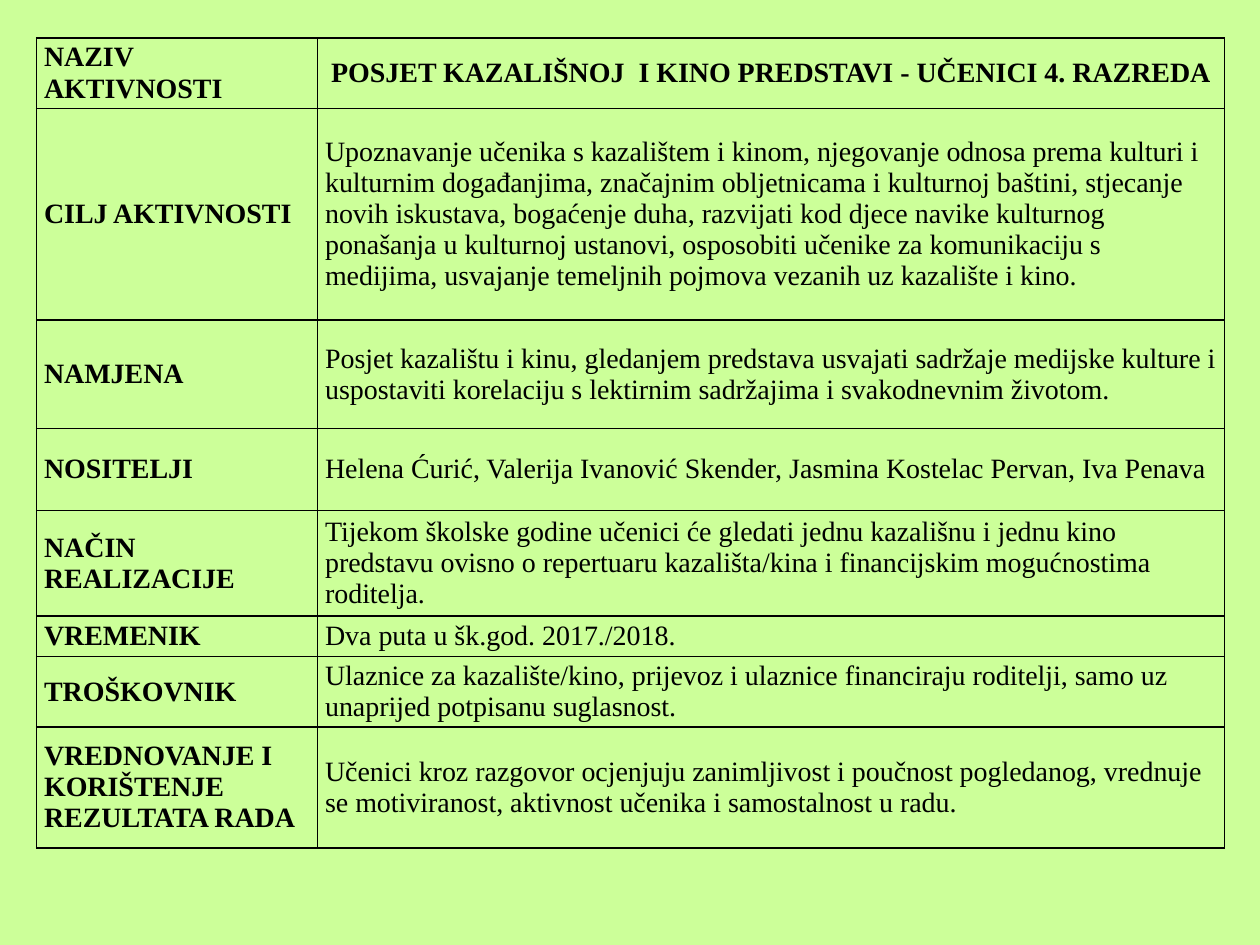
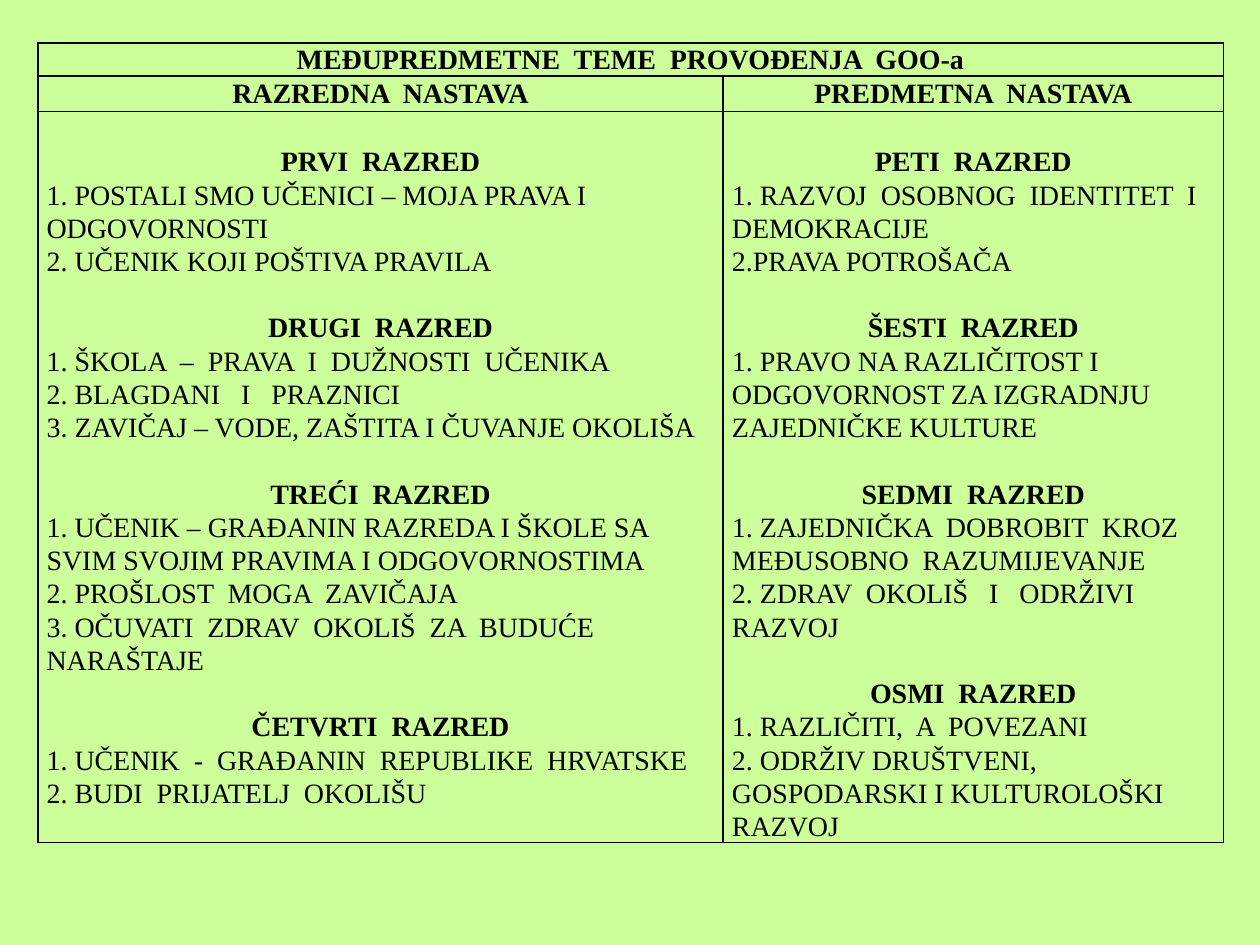
from lxml import etree
from pptx import Presentation
from pptx.dml.color import RGBColor
from pptx.enum.text import MSO_ANCHOR, PP_ALIGN
from pptx.oxml.ns import qn
from pptx.util import Inches, Pt

GREEN = RGBColor(0xCC, 0xFF, 0x99)
BLACK = RGBColor(0x00, 0x00, 0x00)

ACTIVITY = [
    ("NAZIV AKTIVNOSTI", "POSJET KAZALIŠNOJ  I KINO PREDSTAVI - UČENICI 4. RAZREDA"),
    ("CILJ AKTIVNOSTI",
     "Upoznavanje učenika s kazalištem i kinom, njegovanje odnosa prema kulturi i "
     "kulturnim događanjima, značajnim obljetnicama i kulturnoj baštini, stjecanje "
     "novih iskustava, bogaćenje duha, razvijati kod djece navike kulturnog "
     "ponašanja u kulturnoj ustanovi, osposobiti učenike za komunikaciju s "
     "medijima, usvajanje temeljnih pojmova vezanih uz kazalište i kino."),
    ("NAMJENA",
     "Posjet kazalištu i kinu, gledanjem predstava usvajati sadržaje medijske kulture i "
     "uspostaviti korelaciju s lektirnim sadržajima i svakodnevnim životom."),
    ("NOSITELJI",
     "Helena Ćurić, Valerija Ivanović Skender, Jasmina Kostelac Pervan, Iva Penava"),
    ("NAČIN REALIZACIJE",
     "Tijekom školske godine učenici će gledati jednu kazališnu i jednu kino "
     "predstavu ovisno o repertuaru kazališta/kina i financijskim mogućnostima roditelja."),
    ("VREMENIK", "Dva puta u šk.god. 2017./2018."),
    ("TROŠKOVNIK",
     "Ulaznice za kazalište/kino, prijevoz i ulaznice financiraju roditelji, samo uz "
     "unaprijed potpisanu suglasnost."),
    ("VREDNOVANJE I KORIŠTENJE REZULTATA RADA",
     "Učenici kroz razgovor ocjenjuju zanimljivost i poučnost pogledanog, vrednuje "
     "se motiviranost, aktivnost učenika i samostalnost u radu."),
]

LOWER_GRADES = {
    "PRVI  RAZRED": [
        "1. POSTALI SMO UČENICI – MOJA PRAVA I ODGOVORNOSTI",
        "2. UČENIK KOJI POŠTIVA PRAVILA"],
    "DRUGI  RAZRED": [
        "1. ŠKOLA  –  PRAVA  I  DUŽNOSTI  UČENIKA",
        "2. BLAGDANI   I   PRAZNICI",
        "3. ZAVIČAJ – VODE, ZAŠTITA I ČUVANJE OKOLIŠA"],
    "TREĆI  RAZRED": [
        "1. UČENIK – GRAĐANIN RAZREDA I ŠKOLE SA SVIM SVOJIM PRAVIMA I ODGOVORNOSTIMA",
        "2. PROŠLOST  MOGA  ZAVIČAJA",
        "3. OČUVATI  ZDRAV  OKOLIŠ  ZA  BUDUĆE  NARAŠTAJE"],
    "ČETVRTI  RAZRED": [
        "1. UČENIK  -  GRAĐANIN  REPUBLIKE  HRVATSKE",
        "2. BUDI  PRIJATELJ  OKOLIŠU"],
}
UPPER_GRADES = {
    "PETI  RAZRED": [
        "1. RAZVOJ  OSOBNOG  IDENTITET  I  DEMOKRACIJE",
        "2.PRAVA POTROŠAČA"],
    "ŠESTI  RAZRED": [
        "1. PRAVO NA RAZLIČITOST I ODGOVORNOST ZA IZGRADNJU ZAJEDNIČKE KULTURE"],
    "SEDMI  RAZRED": [
        "1. ZAJEDNIČKA  DOBROBIT  KROZ  MEĐUSOBNO  RAZUMIJEVANJE",
        "2. ZDRAV  OKOLIŠ   I   ODRŽIVI   RAZVOJ"],
    "OSMI  RAZRED": [
        "1. RAZLIČITI,  A  POVEZANI",
        "2. ODRŽIV DRUŠTVENI, GOSPODARSKI I KULTUROLOŠKI RAZVOJ"],
}


class Builder:
    """Holds the deck, its style and the current page."""

    font_name = "Times New Roman"
    font_size = Pt(16)
    line_width = Pt(1)
    blank_line = Pt(19)

    def __init__(self):
        self.deck = Presentation()
        self.deck.slide_width = Inches(10)
        self.deck.slide_height = Inches(7.5)
        self.page = None

    def add_page(self):
        self.page = self.deck.slides.add_slide(self.deck.slide_layouts[6])
        fill = self.page.background.fill
        fill.solid()
        fill.fore_color.rgb = GREEN

    def add_table(self, left, top, widths, heights, margin, anchor):
        frame = self.page.shapes.add_table(
            len(heights), len(widths), Inches(left), Inches(top),
            Inches(sum(widths)), Inches(sum(heights)))
        table = frame.table
        table.first_row = table.horz_banding = False
        for column, width in zip(table.columns, widths):
            column.width = Inches(width)
        for row, height in zip(table.rows, heights):
            row.height = Inches(height)
        for cell in table.iter_cells():
            cell.margin_left = cell.margin_right = Inches(margin)
            cell.margin_top = cell.margin_bottom = 0
            cell.vertical_anchor = anchor
            self.add_borders(cell)
            cell.fill.background()
        return table

    def add_borders(self, cell):
        properties = cell._tc.get_or_add_tcPr()
        for side in ("a:lnL", "a:lnR", "a:lnT", "a:lnB"):
            line = etree.SubElement(properties, qn(side), w=str(self.line_width))
            fill = etree.SubElement(line, qn("a:solidFill"))
            etree.SubElement(fill, qn("a:srgbClr"), val=str(BLACK))

    def format_paragraph(self, paragraph, text, bold=False, align=PP_ALIGN.LEFT, spacing=None):
        paragraph.text = text
        paragraph.alignment = align
        paragraph.line_spacing = spacing
        for span in paragraph.runs:
            span.font.name = self.font_name
            span.font.size = self.font_size
            span.font.bold = bold
            span.font.color.rgb = BLACK

    def fill_cell(self, cell, text, **style):
        self.format_paragraph(cell.text_frame.paragraphs[0], text, **style)

    def fill_grades(self, cell, grades, heading_style, spacing):
        # One blank line above each grade; the cell margin makes the first
        cell.margin_top = self.blank_line
        frame = cell.text_frame
        for index, (grade, topics) in enumerate(grades.items()):
            heading = frame.add_paragraph() if index else frame.paragraphs[0]
            self.format_paragraph(heading, grade, **heading_style)
            if index:
                heading.space_before = self.blank_line
            for topic in topics:
                self.format_paragraph(frame.add_paragraph(), topic, spacing=spacing)


def add_activity_page(builder):
    builder.add_page()
    table = builder.add_table(
        0.29, 0.3, [2.23, 7.2], [0.56, 1.68, 0.86, 0.65, 0.84, 0.32, 0.56, 0.96],
        0.06, MSO_ANCHOR.MIDDLE)
    alignments = {"NAZIV AKTIVNOSTI": PP_ALIGN.CENTER, "NOSITELJI": PP_ALIGN.JUSTIFY}
    for row, (label, description) in enumerate(ACTIVITY):
        builder.fill_cell(table.cell(row, 0), label, bold=True)
        builder.fill_cell(table.cell(row, 1), description, bold=row == 0,
                          align=alignments.get(label, PP_ALIGN.LEFT))


def add_topics_page(builder):
    builder.add_page()
    table = builder.add_table(
        0.3, 0.34, [5.44, 3.97], [0.26, 0.28, 5.8], 0.07, MSO_ANCHOR.TOP)
    spacing = 1.07
    heading_style = dict(bold=True, align=PP_ALIGN.CENTER, spacing=spacing)

    # Title across both columns
    table.cell(0, 0).merge(table.cell(0, 1))
    builder.fill_cell(table.cell(0, 0), "MEĐUPREDMETNE  TEME  PROVOĐENJA  GOO-a",
                      **heading_style)

    # Column headings with the topics of their grades
    columns = [("RAZREDNA  NASTAVA", LOWER_GRADES), ("PREDMETNA  NASTAVA", UPPER_GRADES)]
    for column, (heading, grades) in enumerate(columns):
        builder.fill_cell(table.cell(1, column), heading, **heading_style)
        builder.fill_grades(table.cell(2, column), grades, heading_style, spacing)


def main():
    builder = Builder()
    add_activity_page(builder)
    add_topics_page(builder)
    builder.deck.save("out.pptx")


if __name__ == "__main__":
    main()
